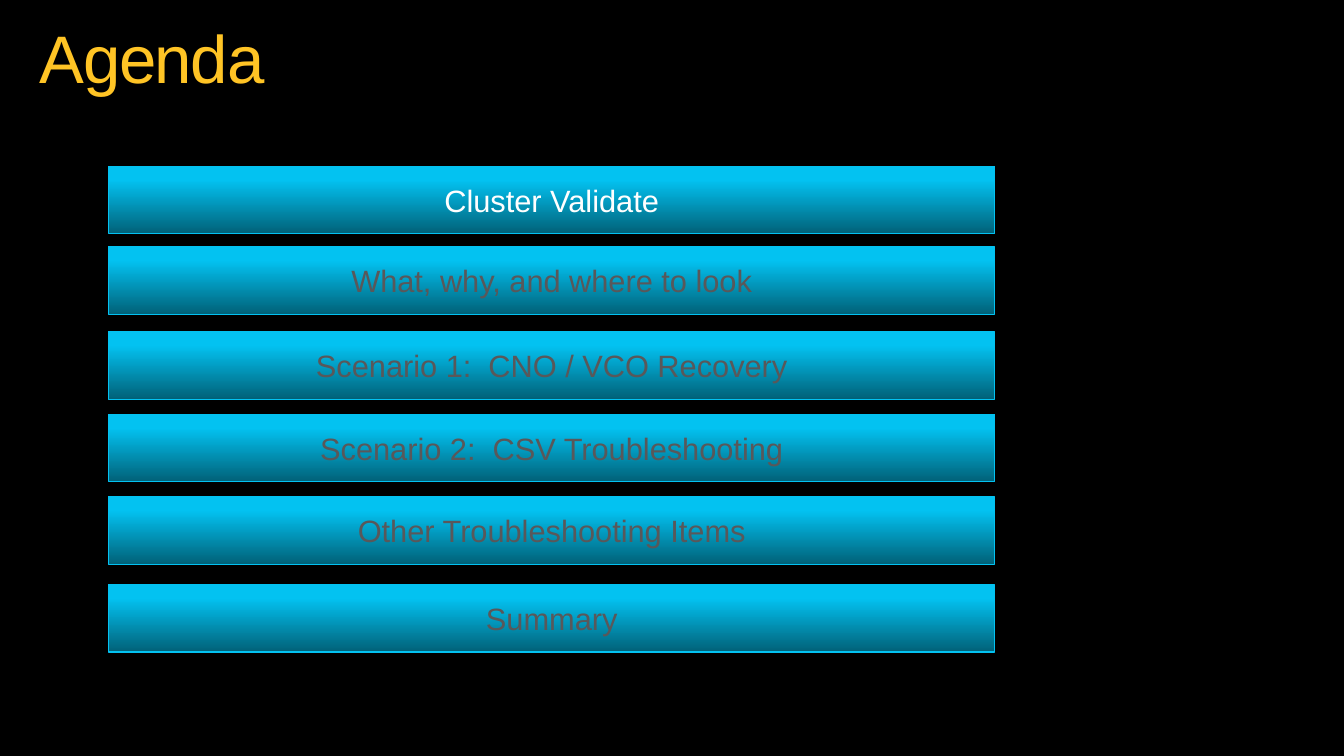
from pptx import Presentation
from pptx.dml.color import RGBColor
from pptx.enum.shapes import MSO_SHAPE
from pptx.enum.text import MSO_ANCHOR, PP_ALIGN
from pptx.util import Cm, Pt

BLACK = RGBColor(0x00, 0x00, 0x00)
WHITE = RGBColor(0xFF, 0xFF, 0xFF)
GOLD = RGBColor(0xFF, 0xC4, 0x25)
GRAY = RGBColor(0x59, 0x58, 0x5A)
TEAL = RGBColor(0x01, 0x61, 0x78)
CYAN = RGBColor(0x03, 0xC2, 0xF1)

# Agenda items: top in cm, wording
ITEMS = [
    (4.19, "Cluster Validate"),
    (6.22, "What, why, and where to look"),
    (8.36, "Scenario 1:  CNO / VCO Recovery"),
    (10.44, "Scenario 2:  CSV Troubleshooting"),
    (12.52, "Other Troubleshooting Items"),
    (14.73, "Summary"),
]


def set_text(frame, text, size, color):
    frame.word_wrap = True
    frame.vertical_anchor = MSO_ANCHOR.MIDDLE
    frame.text = text
    run = frame.paragraphs[0].runs[0]
    run.font.name = "Arial"
    run.font.size = Pt(size)
    run.font.color.rgb = color
    return run


def add_title(slide, text):
    box = slide.shapes.add_textbox(Cm(1), Cm(0.43), Cm(25.9), Cm(2.26))
    frame = box.text_frame
    frame.margin_left = frame.margin_right = 0
    frame.margin_top = frame.margin_bottom = 0
    run = set_text(frame, text, 48, GOLD)
    frame.paragraphs[0].line_spacing = 0.9
    # Tighten letters by one point
    run.font._element.set("spc", "-100")


def add_bar(slide, top, text, color):
    bar = slide.shapes.add_shape(
        MSO_SHAPE.ROUNDED_RECTANGLE, Cm(2.74), Cm(top), Cm(22.33), Cm(1.7))
    bar.adjustments[0] = 0
    bar.shadow.inherit = False
    # Dark at the bottom, bright from 80 % upwards
    bar.fill.gradient()
    bar.fill.gradient_angle = 90
    for stop, shade, place in zip(bar.fill.gradient_stops, (TEAL, CYAN), (0, 0.8)):
        stop.color.rgb = shade
        stop.position = place
    bar.line.color.rgb = CYAN
    bar.line.width = Pt(0.75)
    set_text(bar.text_frame, text, 22, color)
    bar.text_frame.paragraphs[0].alignment = PP_ALIGN.CENTER


def main():
    deck = Presentation()
    deck.slide_width, deck.slide_height = Cm(33.87), Cm(19.05)
    slide = deck.slides.add_slide(deck.slide_layouts[6])
    slide.background.fill.solid()
    slide.background.fill.fore_color.rgb = BLACK

    add_title(slide, "Agenda")
    # The current topic is white, the others are gray
    for place, (top, text) in enumerate(ITEMS):
        add_bar(slide, top, text, GRAY if place else WHITE)

    deck.save("out.pptx")


if __name__ == "__main__":
    main()
